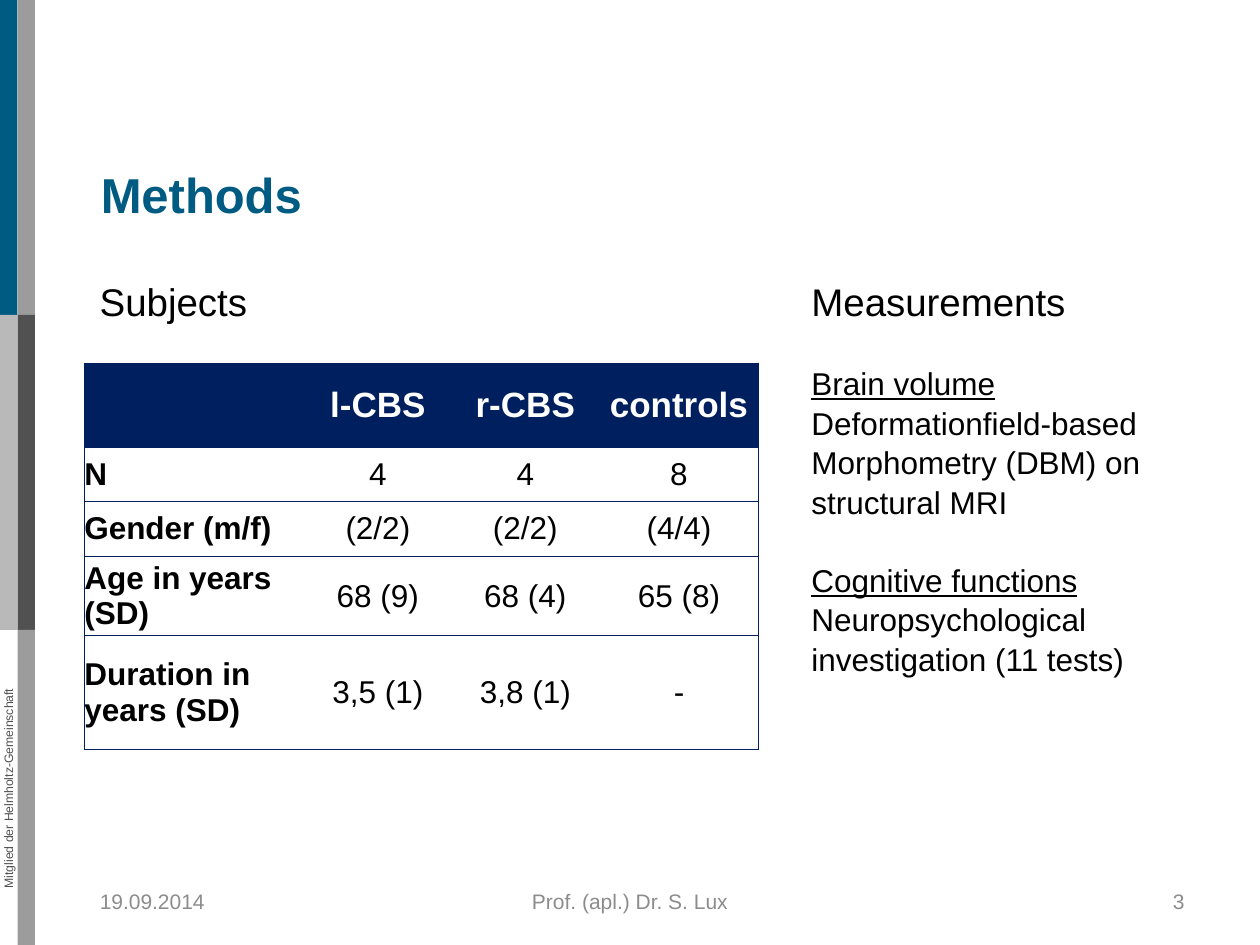
"""Build the Methods slide with its subject table and list of measurements."""
from lxml.etree import SubElement
from pptx import Presentation
from pptx.dml.color import RGBColor
from pptx.enum.shapes import MSO_SHAPE as Shape
from pptx.enum.text import MSO_ANCHOR as Anchor, PP_ALIGN as Align
from pptx.oxml.ns import qn
from pptx.util import Pt

BLUE = RGBColor(0x00, 0x5B, 0x82)
NAVY = RGBColor(0x00, 0x1F, 0x5E)
LIGHT = RGBColor(0xB9, 0xB9, 0xB9)
GRAY = RGBColor(0x9C, 0x9C, 0x9C)
DARK = RGBColor(0x51, 0x51, 0x51)
FOOTER = RGBColor(0x8C, 0x8C, 0x8C)
BLACK = RGBColor(0, 0, 0)
WHITE = RGBColor(255, 255, 255)

BAND_WIDTH, BAND_HEIGHT = 10, 180
BANDS = [[BLUE, GRAY], [LIGHT, DARK], [None, GRAY]]

COLUMNS = [126, 83.5, 85, 90.7]
ROWS = [48, 31, 31.5, 45.4, 64.8]
SUBJECTS = [
    ["", "l-CBS", "r-CBS", "controls"],
    ["N", "4", "4", "8"],
    ["Gender (m/f)", "(2/2)", "(2/2)", "(4/4)"],
    ["Age in years (SD)", "68 (9)", "68 (4)", "65 (8)"],
    ["Duration in years (SD)", "3,5 (1)", "3,8 (1)", "-"],
]
MEASUREMENTS = [
    "Measurements",
    "Brain volume",
    "Deformationfield-based",
    "Morphometry (DBM) on",
    "structural MRI",
    "Cognitive functions",
    "Neuropsychological",
    "investigation (11 tests)",
]
UNDERLINED = ["Brain volume", "Cognitive functions"]


class SlideWriter:
    """Hold the style and the current page, and draw each kind of element."""

    font_name = "Arial"
    border_color = NAVY
    border_width = 0.75

    def __init__(self, page):
        self.page = page

    def format(self, para, size, color, bold=False, align=Align.LEFT):
        para.alignment = align
        for span in para.runs:
            font = span.font
            font.name, font.size, font.bold = self.font_name, Pt(size), bold
            font.color.rgb = color

    def bar(self, left, top, width, height, color):
        bar = self.page.shapes.add_shape(
            Shape.RECTANGLE, Pt(left), Pt(top), Pt(width), Pt(height))
        bar.shadow.inherit = False
        bar.fill.solid()
        bar.fill.fore_color.rgb = color
        bar.line.fill.background()

    def text(self, text, left, top, width, height, size, color, bold=False,
             align=Align.LEFT, anchor=Anchor.TOP, spacing=1.0, rotation=0):
        box = self.page.shapes.add_textbox(Pt(left), Pt(top), Pt(width), Pt(height))
        box.rotation = rotation
        frame = box.text_frame
        frame.word_wrap = True
        frame.vertical_anchor = anchor
        frame.margin_left = frame.margin_right = 0
        frame.margin_top = frame.margin_bottom = 0
        frame.text = text
        for para in frame.paragraphs:
            para.line_spacing = spacing
            self.format(para, size, color, bold, align)
        return frame

    def border(self, cell, side, visible):
        line = SubElement(cell._tc.get_or_add_tcPr(), qn(f"a:ln{side}"),
                          w=str(Pt(self.border_width)))
        if visible:
            fill = SubElement(line, qn("a:solidFill"))
            SubElement(fill, qn("a:srgbClr"), val=str(self.border_color))
        else:
            SubElement(line, qn("a:noFill"))

    def table(self, rows, left, top, widths, heights):
        frame = self.page.shapes.add_table(
            len(rows), len(widths), Pt(left), Pt(top), Pt(sum(widths)), Pt(sum(heights)))
        table = frame.table
        table.first_row = table.horz_banding = False
        for column, width in zip(table.columns, widths):
            column.width = Pt(width)
        for row, height in zip(table.rows, heights):
            row.height = Pt(height)
        for r, values in enumerate(rows):
            for c, value in enumerate(values):
                self.cell(table.cell(r, c), value, r == 0, c == 0, c == len(widths) - 1)

    def cell(self, cell, value, header, first, last):
        cell.margin_left = cell.margin_right = 0
        cell.margin_top = cell.margin_bottom = 0
        cell.vertical_anchor = Anchor.MIDDLE
        cell.text = value
        self.format(cell.text_frame.paragraphs[0], 20 if header else 18,
                    WHITE if header else BLACK, header or first,
                    Align.LEFT if first else Align.CENTER)
        for side, visible in (("L", first), ("R", last), ("T", True), ("B", True)):
            self.border(cell, side, visible)
        if header:
            cell.fill.solid()
            cell.fill.fore_color.rgb = NAVY
        else:
            cell.fill.background()


def main():
    deck = Presentation()
    deck.slide_width, deck.slide_height = Pt(720), Pt(540)
    writer = SlideWriter(deck.slides.add_slide(deck.slide_layouts[6]))

    for r, colors in enumerate(BANDS):
        for c, color in enumerate(colors):
            if color is not None:
                writer.bar(c * BAND_WIDTH, r * BAND_HEIGHT, BAND_WIDTH, BAND_HEIGHT, color)
    writer.text("Mitglied der Helmholtz-Gemeinschaft", -85, 446, 180, 9, 7, DARK,
                align=Align.CENTER, rotation=270)

    writer.text("Methods", 57.6, 94, 590, 45, 28, BLUE, bold=True)
    writer.text("Subjects", 57, 157.5, 380, 45, 22, BLACK, spacing=1.05)
    writer.table(SUBJECTS, 48.2, 207.5, COLUMNS, ROWS)

    frame = writer.text("\n".join(MEASUREMENTS), 463.7, 157.5, 210, 225, 18, BLACK,
                        spacing=1.05)
    writer.format(frame.paragraphs[0], 22, BLACK)
    for para in frame.paragraphs:
        if para.text in UNDERLINED:
            para.space_before = Pt(21.7)
            para.runs[0].font.underline = True

    for text, left, width, align in (
            ("19.09.2014", 57, 168, Align.LEFT),
            ("Prof. (apl.) Dr. S. Lux", 246, 228, Align.CENTER),
            ("3", 516, 160.8, Align.RIGHT)):
        writer.text(text, left, 500.5, width, 29, 12, FOOTER, align=align,
                    anchor=Anchor.MIDDLE)
    deck.save("out.pptx")


if __name__ == "__main__":
    main()
